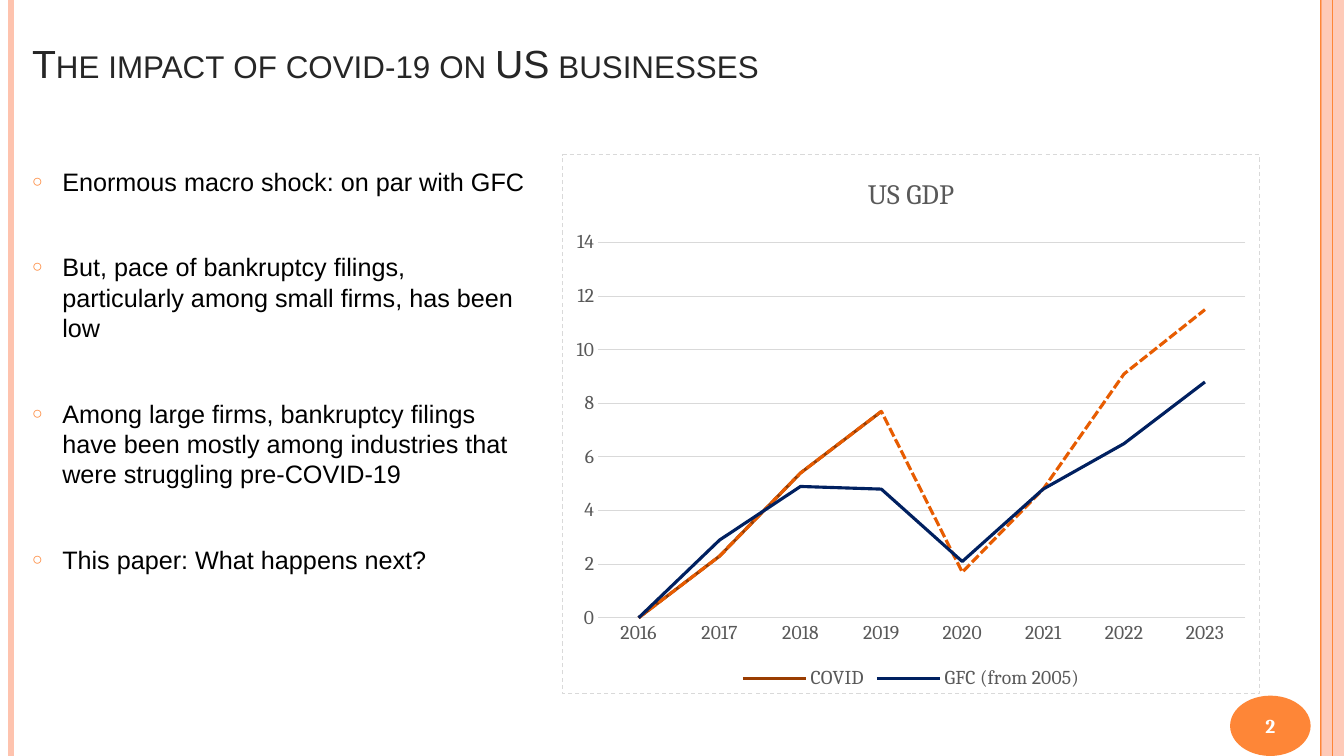
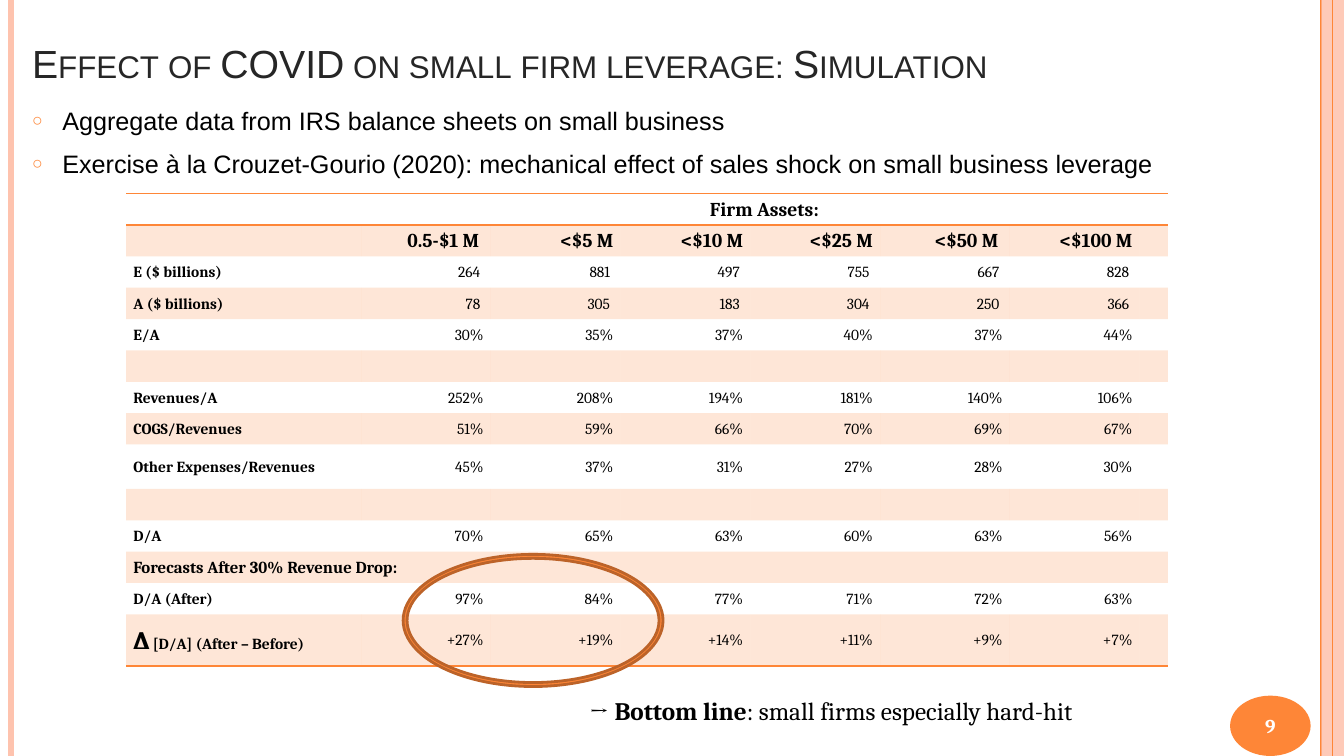
from lxml import etree
from pptx import Presentation
from pptx.chart.data import CategoryChartData
from pptx.dml.color import RGBColor
from pptx.enum.chart import XL_CHART_TYPE, XL_LEGEND_POSITION, XL_TICK_MARK
from pptx.enum.dml import MSO_LINE
from pptx.enum.shapes import MSO_CONNECTOR, MSO_SHAPE
from pptx.enum.text import MSO_ANCHOR, PP_ALIGN
from pptx.oxml import parse_xml
from pptx.oxml.ns import nsdecls, qn
from pptx.util import Cm, Pt

LEFT, MID, RIGHT = PP_ALIGN.LEFT, PP_ALIGN.CENTER, PP_ALIGN.RIGHT
TOP, CENTER, BOTTOM = MSO_ANCHOR.TOP, MSO_ANCHOR.MIDDLE, MSO_ANCHOR.BOTTOM
DASH, DOTS = MSO_LINE.DASH, MSO_LINE.SQUARE_DOT
NO_TICK = XL_TICK_MARK.NONE

ORANGE = RGBColor(0xFE, 0x86, 0x37)
PINK = RGBColor(0xFE, 0xC3, 0xAE)
RUST = RGBColor(0xBC, 0x63, 0x29)
BROWN = RGBColor(0x9A, 0x3D, 0x01)
FLAME = RGBColor(0xE7, 0x5C, 0x01)
NAVY = RGBColor(0x00, 0x20, 0x60)
INK = RGBColor(0x26, 0x26, 0x26)
GREY = RGBColor(0x59, 0x59, 0x59)
PALE = RGBColor(0xD9, 0xD9, 0xD9)
BLACK = RGBColor(0, 0, 0)
WHITE = RGBColor(0xFF, 0xFF, 0xFF)
SANS, SERIF = "Arial", "Cambria"
WIDE, HIGH = 33.87, 19.05
EDGE, SPAN = 0.56, 32.18
PLAIN = "{2D5ABB26-0587-4C30-8999-92F81FD0307C}"

IMPACT = [
    "Enormous macro shock: on par with GFC",
    "But, pace of bankruptcy filings, particularly among small firms, has been low",
    "Among large firms, bankruptcy filings have been mostly among industries "
    "that were struggling pre-COVID-19",
    "This paper: What happens next?",
]
YEARS = [str(year) for year in range(2016, 2024)]
LINES = [
    ("COVID", [0, 2.3, 5.4, 7.7, None, None, None, None], BROWN, None),
    ("Series 2", [0, 2.3, 5.4, 7.7, 1.7, 4.8, 9.1, 11.5], FLAME, DOTS),
    ("GFC (from 2005)", [0, 2.9, 4.9, 4.8, 2.1, 4.8, 6.5, 8.8], NAVY, None),
]

METHOD = [
    "Aggregate data from IRS balance sheets on small business",
    "Exercise à la Crouzet-Gourio (2020): mechanical effect of sales shock "
    "on small business leverage",
]
DELTA = [("∆", {"size": 18}), (" [D/A] (After – Before)", {})]
ROWS = [
    ("", "Firm Assets:"),
    ("", "0.5-$1 M ", "<$5 M", "<$10 M", "<$25 M", "<$50 M ", "<$100 M"),
    ("E ($ billions)", "264 ", "881 ", "497 ", "755 ", "667 ", "828 "),
    ("A ($ billions)", "78 ", "305 ", "183 ", "304 ", "250 ", "366 "),
    ("E/A", "30%", "35%", "37%", "40%", "37%", "44%"),
    (),
    ("Revenues/A", "252%", "208%", "194%", "181%", "140%", "106%"),
    ("COGS/Revenues", "51%", "59%", "66%", "70%", "69%", "67%"),
    ("Other Expenses/Revenues", "45%", "37%", "31%", "27%", "28%", "30%"),
    (),
    ("D/A", "70%", "65%", "63%", "60%", "63%", "56%"),
    ("Forecasts After 30% Revenue Drop:",),
    ("D/A (After)", "97%", "84%", "77%", "71%", "72%", "63%"),
    (DELTA, "+27%", "+19%", "+14%", "+11%", "+9%", "+7%"),
]
COLS = [5.92] + [3.27] * 6 + [0.71]
TALL = {8: 1.12, 13: 1.3}
FORECAST = 11
BOTTOM_LINE = [("→ ", {}), ("Bottom line", {"bold": True}),
               (": small firms especially hard-hit", {})]


def style(font, size, color, name, bold=False):
    font.size, font.name, font.bold = Pt(size), name, bold
    font.color.rgb = color


def write(frame, paras, size=18, color=BLACK, font=SANS, bold=False, align=LEFT,
          anchor=TOP, before=0, after=0, line=None, bullet=False, caps=False):
    """Fill a text frame; a paragraph is a string or a list of (text, changes)."""
    frame.word_wrap, frame.vertical_anchor = True, anchor
    for i, runs in enumerate(paras):
        para = frame.add_paragraph() if i else frame.paragraphs[0]
        para.alignment, para.line_spacing = align, line
        para.space_before, para.space_after = Pt(before), Pt(after)
        if bullet:
            mark(para)
        for text, change in [(runs, {})] if isinstance(runs, str) else runs:
            run = para.add_run()
            run.text = text
            look = {"size": size, "color": color, "name": font, "bold": bold}
            style(run.font, **{**look, **change})
            if caps:
                run._r.get_or_add_rPr().set("cap", "small")


def mark(para):
    """Give a paragraph a hanging ring bullet."""
    props = para._p.get_or_add_pPr()
    props.set("marL", str(Cm(0.76)))
    props.set("indent", str(-Cm(0.76)))
    for tag, key, val in [("buClr", None, None), ("buSzPct", "val", "70000"),
                          ("buFont", "typeface", SANS), ("buChar", "char", "○")]:
        node = etree.SubElement(props, qn("a:" + tag))
        if key:
            node.set(key, val)
        else:
            etree.SubElement(node, qn("a:srgbClr"), val=str(ORANGE))


def box(slide, x, y, w, h, paras, **look):
    frame = slide.shapes.add_textbox(Cm(x), Cm(y), Cm(w), Cm(h)).text_frame
    write(frame, paras, **look)
    return frame


def points(slide, y, w, paras, before=6):
    return box(slide, EDGE, y, w, HIGH - y, paras, before=before, after=3,
               line=Pt(21.6), bullet=True)


def shape(slide, kind, x, y, w, h, fill):
    item = slide.shapes.add_shape(kind, Cm(x), Cm(y), Cm(w), Cm(h))
    item.shadow.inherit = False
    item.fill.solid()
    item.fill.fore_color.rgb = fill
    item.line.fill.background()
    return item


def fade(node, share):
    """Set the opacity, in percent, of the first colour inside a node."""
    color = next(node.iter(qn("a:srgbClr")))
    etree.SubElement(color, qn("a:alpha"), val=str(share * 1000))


def rule(slide, x, color, width):
    line = slide.shapes.add_connector(MSO_CONNECTOR.STRAIGHT, Cm(x), 0, Cm(x), Cm(HIGH))
    line.line.color.rgb, line.line.width = color, Pt(width)
    etree.SubElement(line._element.spPr, qn("a:effectLst"))


def start(deck, title, number):
    """Add a slide with side bands, title and page number."""
    slide = deck.slides.add_slide(deck.slide_layouts[6])
    rule(slide, 0.28, PINK, 4.5)
    rule(slide, 33.3, ORANGE, 1.5)
    band = shape(slide, MSO_SHAPE.RECTANGLE, 33.3, 0, WIDE - 33.3, HIGH, PINK)
    fade(band._element.spPr, 87)
    rule(slide, 33.58, ORANGE, 0.75)
    disc = shape(slide, MSO_SHAPE.OVAL, 31, 17.53, 2.03, 1.52, ORANGE)
    write(disc.text_frame, [number], size=14, color=WHITE, font=SERIF, bold=True,
          align=MID, anchor=CENTER)
    box(slide, EDGE, 0.33, SPAN, 1.98, [title], size=28, color=INK,
        anchor=BOTTOM, caps=True)
    return slide


def plot(slide):
    data = CategoryChartData()
    data.categories = YEARS
    for name, vals, *_ in LINES:
        data.add_series(name, vals)
    chart = slide.shapes.add_chart(XL_CHART_TYPE.LINE, Cm(14.17), Cm(3.89),
                                   Cm(17.58), Cm(13.61), data).chart
    style(chart.font, 10, BLACK, SERIF)
    chart.has_title = True
    write(chart.chart_title.text_frame, ["US GDP"], size=20, color=GREY, font=SERIF)
    chart.chart_title.include_in_layout = False
    chart.plots[0].vary_by_categories = False
    for item, (_, _, color, dash) in zip(chart.plots[0].series, LINES):
        item.smooth = False
        line = item.format.line
        line.color.rgb, line.width = color, Pt(2.25)
        if dash:
            line.dash_style = dash

    years, scale = chart.category_axis, chart.value_axis
    for axis in (years, scale):
        axis.major_tick_mark = axis.minor_tick_mark = NO_TICK
        style(axis.tick_labels.font, 14, GREY, SERIF)
    scale.minimum_scale, scale.maximum_scale, scale.major_unit = 0, 14, 2
    scale.format.line.fill.background()
    for line in (years.format.line, scale.major_gridlines.format.line):
        line.color.rgb, line.width = PALE, Pt(0.75)

    chart.has_legend = True
    legend = chart.legend
    legend.position, legend.include_in_layout = XL_LEGEND_POSITION.BOTTOM, False
    style(legend.font, 14, GREY, SERIF)
    legend._element.find(qn("c:legendPos")).addnext(parse_xml(
        f'<c:legendEntry {nsdecls("c")}><c:idx val="1"/><c:delete val="1"/>'
        '</c:legendEntry>'))
    chart._chartSpace.find(qn("c:chart")).addnext(parse_xml(
        f'<c:spPr {nsdecls("c", "a")}><a:solidFill><a:srgbClr val="{WHITE}"/>'
        f'</a:solidFill><a:ln w="{Pt(0.75)}"><a:solidFill><a:srgbClr val="{PALE}"/>'
        '</a:solidFill><a:prstDash val="dash"/></a:ln></c:spPr>'))


def border(cell, sides):
    """Draw cell borders; sides are listed in schema order, such as "TB"."""
    props = cell._tc.get_or_add_tcPr()
    for i, side in enumerate(sides):
        props.insert(i, parse_xml(
            f'<a:ln{side} {nsdecls("a")} w="{Pt(1)}"><a:solidFill>'
            f'<a:srgbClr val="{ORANGE}"/></a:solidFill></a:ln{side}>'))


def grid(slide):
    last = len(ROWS) - 1
    highs = [TALL.get(r, 0.79) for r in range(len(ROWS))]
    table = slide.shapes.add_table(len(ROWS), len(COLS), Cm(3.18), Cm(4.88),
                                   Cm(sum(COLS)), Cm(sum(highs))).table
    table.first_row = table.horz_banding = False
    table._tbl.tblPr.find(qn("a:tableStyleId")).text = PLAIN
    for col, width in zip(table.columns, COLS):
        col.width = Cm(width)
    for row, high in zip(table.rows, highs):
        row.height = Cm(high)
    table.cell(0, 1).merge(table.cell(0, 7))
    table.cell(FORECAST, 0).merge(table.cell(FORECAST, 7))

    for r, texts in enumerate(ROWS):
        size = 14 if r < 2 else 12 if r == FORECAST else 11
        for c in range(len(COLS)):
            cell = table.cell(r, c)
            cell.margin_left = cell.margin_right = Cm(0.18)
            cell.margin_top = cell.margin_bottom = 0
            cell.vertical_anchor = CENTER
            if r % 2:
                cell.fill.solid()
                cell.fill.fore_color.rgb = ORANGE
                fade(cell._tc.tcPr, 20)
            else:
                cell.fill.background()
            border(cell, "TB" if r == 0 else "B" if r == last else "")
            if c < len(texts) and texts[c]:
                align = LEFT if c == 0 else MID if r == 0 else RIGHT
                write(cell.text_frame, [texts[c]], size=size, font=SERIF, line=1.07,
                      bold=r < 2 or c == 0, align=align, anchor=CENTER)


def main():
    deck = Presentation()
    deck.slide_width, deck.slide_height = Cm(WIDE), Cm(HIGH)

    slide = start(deck, "The impact of covid-19 on US businesses", "2")
    frame = points(slide, 2.97, 12.98, IMPACT, before=36.75)
    frame.margin_top = Cm(1.21)
    plot(slide)

    slide = start(deck, "Effect of COVID on small firm leverage: Simulation", "9")
    points(slide, 2.54, SPAN, METHOD)
    grid(slide)
    ring = shape(slide, MSO_SHAPE.DONUT, 10.16, 13.97, 6.55, 3.33, ORANGE)
    ring.adjustments[0] = 0.03
    ring.line.color.rgb, ring.line.width = RUST, Pt(2)
    box(slide, 14.6, 17.4, 14.66, 1.02, [BOTTOM_LINE], font=SERIF)

    deck.save("out.pptx")


if __name__ == "__main__":
    main()
